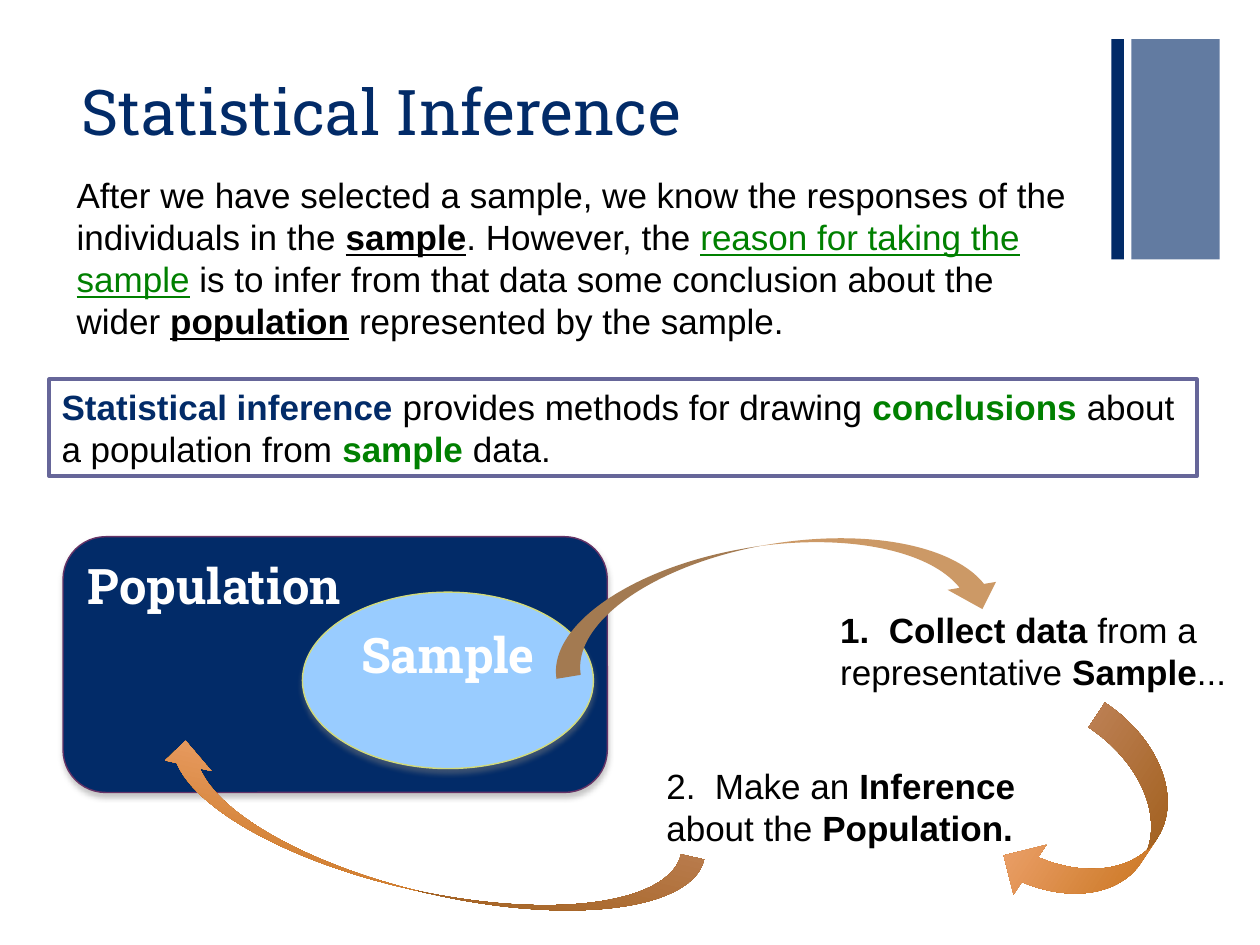
from lxml import etree
from pptx import Presentation
from pptx.dml.color import RGBColor
from pptx.enum.shapes import MSO_SHAPE
from pptx.enum.text import MSO_ANCHOR, MSO_AUTO_SIZE, PP_ALIGN
from pptx.oxml.ns import qn
from pptx.util import Inches, Pt

COLORS = {
    "navy": "022B68",
    "black": "000000",
    "white": "FFFFFF",
    "green": "008000",
    "frame": "666699",
    "plum": "663366",
    "sky": "99CCFF",
    "lime": "D2DA7A",
    "tan": "CC9966",
    "rust": "BA6200",
    "peach": "FFB993",
    "shadow": "808080",
}
SERIF, SANS = "Roboto Slab", "Arial"


def rgb(name):
    return RGBColor.from_string(COLORS[name])


def add_alpha(color, percent):
    etree.SubElement(color, qn("a:alpha"), val=str(percent * 1000))


def add_shape(slide, kind, box, fill=None, line=None, width=1):
    s = slide.shapes.add_shape(kind, *map(Inches, box))
    s.shadow.inherit = False
    if fill:
        s.fill.solid()
        s.fill.fore_color.rgb = rgb(fill)
    if line:
        s.line.color.rgb = rgb(line)
        s.line.width = Pt(width)
    else:
        s.line.fill.background()
    return s


def add_shadow(s):
    effects = s._element.spPr.find(qn("a:effectLst"))
    outer = etree.SubElement(effects, qn("a:outerShdw"), blurRad=str(Pt(3)),
                             dist=str(Pt(2.4)), dir="5400000", rotWithShape="0")
    color = etree.SubElement(outer, qn("a:srgbClr"), val=COLORS["shadow"])
    add_alpha(color, 45)


def write_text(s, runs, font=SANS, size=20, bold=None, align=PP_ALIGN.LEFT):
    tf = s.text_frame
    tf.word_wrap = True
    tf.vertical_anchor = MSO_ANCHOR.TOP
    p = tf.paragraphs[0]
    p.alignment = align
    p.font.name = font
    p.font.size = Pt(size)
    p.font.bold = bold
    if font == SANS:
        p.line_spacing = Pt(24)
    for text, color, *marks in runs:
        r = p.add_run()
        r.text = text
        r.font.color.rgb = rgb(color)
        if "bold" in marks:
            r.font.bold = True
        if "underline" in marks:
            r.font.underline = True


def add_text(slide, box, runs, **style):
    s = slide.shapes.add_textbox(*map(Inches, box))
    write_text(s, runs, **style)
    return s


def add_label_shape(slide, kind, box, fill, line, label, align):
    s = add_shape(slide, kind, box, fill, line, 0.79)
    add_shadow(s)
    write_text(s, [(label, "white")], SERIF, 28, True, align)


def add_arrow(slide, box, rotation, fill=None):
    s = add_shape(slide, MSO_SHAPE.CURVED_DOWN_ARROW, box, fill)
    s.rotation = rotation
    if not fill:
        s.fill.gradient()
        s.fill.gradient_angle = 270
        for stop, color in zip(s.fill.gradient_stops, ("rust", "peach")):
            stop.color.rgb = rgb(color)


def add_corner_bars(slide):
    wide = add_shape(slide, MSO_SHAPE.RECTANGLE, (8.98, 0.31, 0.7, 1.75), "navy")
    add_alpha(wide._element.spPr.find(qn("a:solidFill"))[0], 62)
    add_shape(slide, MSO_SHAPE.RECTANGLE, (8.82, 0.31, 0.1, 1.75), "navy")


def main():
    prs = Presentation()
    prs.slide_width, prs.slide_height = Inches(10), Inches(7.5)
    slide = prs.slides.add_slide(prs.slide_layouts[6])

    add_corner_bars(slide)
    add_text(slide, (0.55, 0.53, 8.26, 1.22), [("Statistical Inference", "navy")],
             font=SERIF, size=36)
    add_text(slide, (0.51, 1.33, 8.17, 1.48), [
        ("After we have selected a sample, we know the responses of the "
         "individuals in the ", "black"),
        ("sample", "black", "bold", "underline"),
        (". However, the ", "black"),
        ("reason for taking the sample", "green", "underline"),
        (" is to infer from that data some conclusion about the wider ", "black"),
        ("population", "black", "bold", "underline"),
        (" represented by the sample.", "black"),
    ])

    definition = add_shape(slide, MSO_SHAPE.RECTANGLE, (0.39, 3.01, 9.11, 0.77),
                           "white", "frame", 2)
    write_text(definition, [
        ("Statistical inference ", "navy", "bold"),
        ("provides methods for drawing ", "black"),
        ("conclusions ", "green", "bold"),
        ("about a population from ", "black"),
        ("sample ", "green", "bold"),
        ("data.", "black"),
    ])

    add_label_shape(slide, MSO_SHAPE.ROUNDED_RECTANGLE, (0.5, 4.26, 4.32, 2.03),
                    "navy", "plum", "Population", PP_ALIGN.LEFT)
    add_label_shape(slide, MSO_SHAPE.OVAL, (2.4, 4.7, 2.31, 1.4),
                    "sky", "lime", "Sample", PP_ALIGN.CENTER)
    add_arrow(slide, (4.33, 4.32, 3.62, 0.78), 350.7, "tan")

    collect = add_text(slide, (6.57, 4.78, 3.38, 0.77), [
        ("1.  Collect data ", "black", "bold"),
        ("from a representative ", "black"),
        ("Sample", "black", "bold"),
        ("...", "black"),
    ])
    infer = add_text(slide, (5.19, 6.02, 3.2, 0.77), [
        ("2.  Make an ", "black"),
        ("Inference ", "black", "bold"),
        ("about the ", "black"),
        ("Population.", "black", "bold"),
    ])
    for s in (definition, collect, infer):
        s.text_frame.auto_size = MSO_AUTO_SIZE.SHAPE_TO_FIT_TEXT

    add_arrow(slide, (7.85, 6.07, 1.69, 0.94), 123.5)
    add_arrow(slide, (1.15, 6.32, 4.41, 0.75), 192.9)
    prs.save("out.pptx")


if __name__ == "__main__":
    main()
